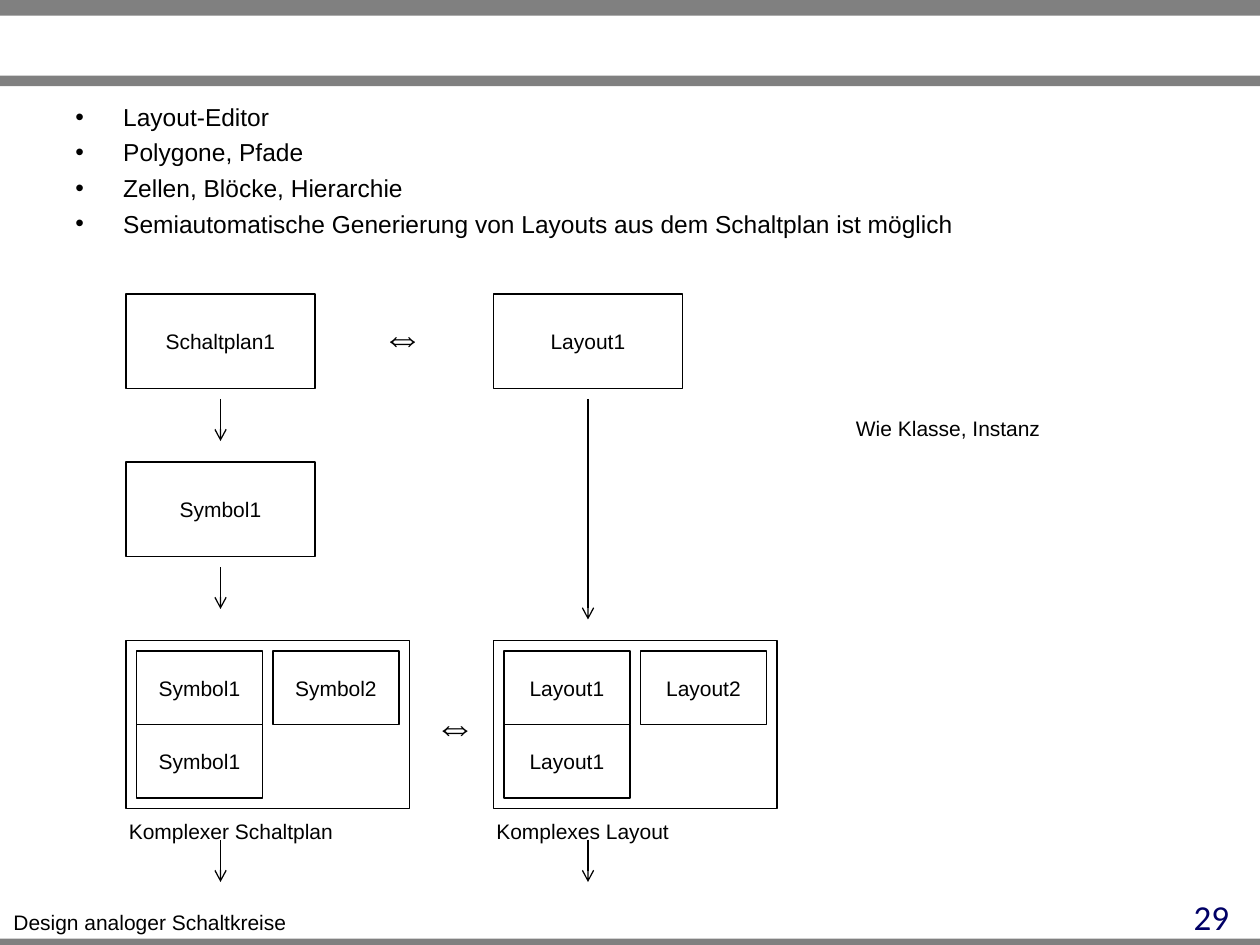
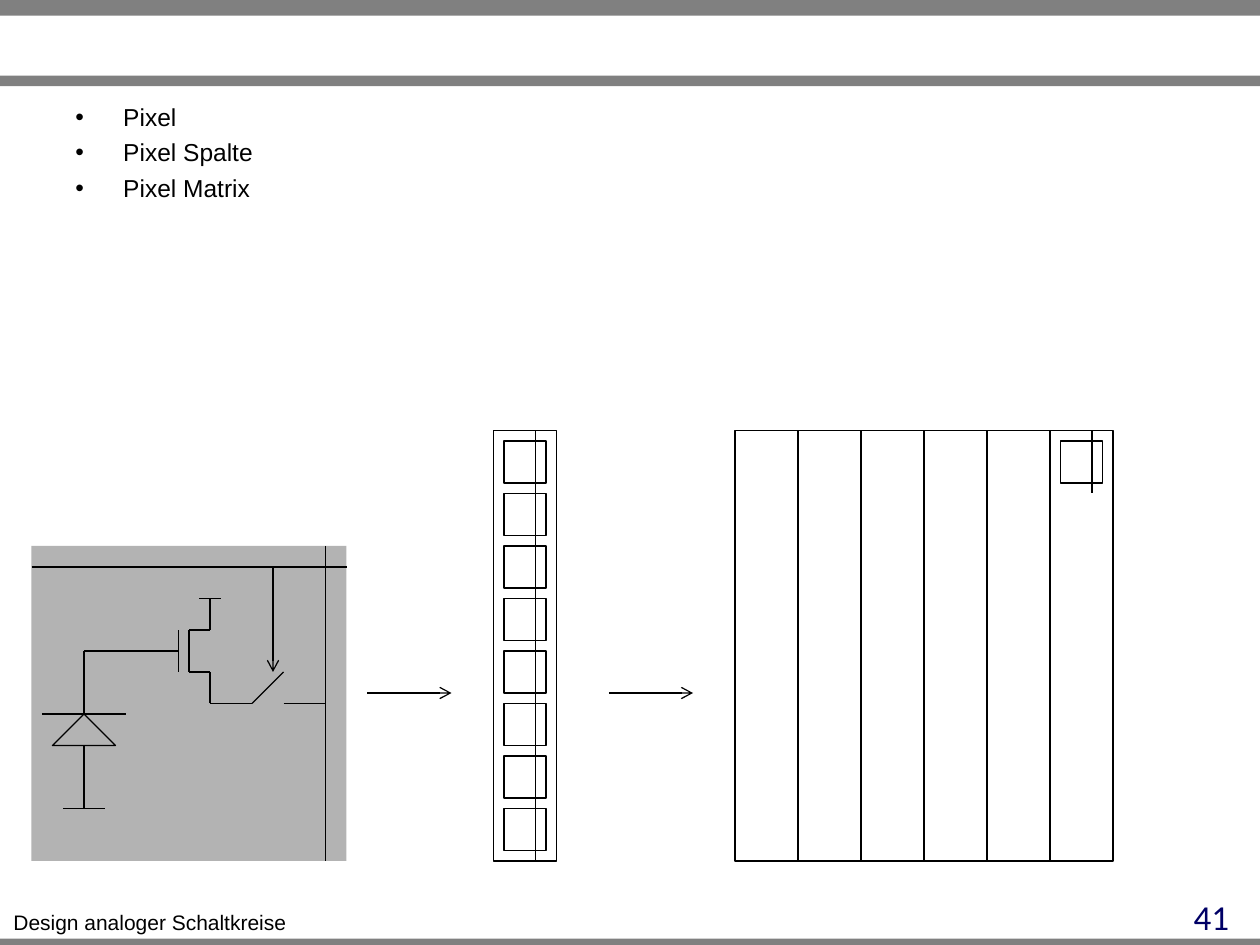
from typing import NamedTuple

from lxml.etree import SubElement
from pptx import Presentation
from pptx.dml.color import RGBColor
from pptx.enum.shapes import MSO_CONNECTOR, MSO_SHAPE
from pptx.enum.text import MSO_ANCHOR, PP_ALIGN
from pptx.oxml.ns import qn
from pptx.shapes.autoshape import Shape
from pptx.shapes.shapetree import GroupShapes, SlideShapes
from pptx.slide import Slide
from pptx.util import Inches, Pt

BLACK = RGBColor(0x00, 0x00, 0x00)
BAND_GREY = RGBColor(0x80, 0x80, 0x80)
PIXEL_GREY = RGBColor(0xB3, 0xB3, 0xB3)
NUMBER_BLUE = RGBColor(0x00, 0x00, 0x66)

COLUMNS, ROWS = 120, 90
CELL = Inches(10) / COLUMNS
LINE_WIDTH = Pt(0.75)
BULLET_INDENT = Inches(0.38)
BLOCK_SHIFT = 35
COLUMN_WIDTH, COLUMN_HEIGHT, MATRIX_TOP = 6, 41, 41
PIXEL_PITCH = 5

ShapeList = SlideShapes | GroupShapes


class Box(NamedTuple):
    column: float
    row: float
    width: float
    height: float

    def lengths(self) -> list[int]:
        return [grid(value) for value in self]


class Line(NamedTuple):
    start_column: float
    start_row: float
    end_column: float
    end_row: float
    arrow: bool = False


class Style(NamedTuple):
    size: float = 12
    font: str = "Arial"
    color: RGBColor = BLACK
    alignment: PP_ALIGN = PP_ALIGN.CENTER


class Caption(NamedTuple):
    text: str
    box: Box
    style: Style = Style()
    wrap: bool = False


class Block(NamedTuple):
    text: str
    box: Box


BANDS = [Box(0, 89.4, COLUMNS, 1), Box(0, 0, COLUMNS, 1.5), Box(0, 7.2, COLUMNS, 1)]
FOOTER = Caption("Design analoger Schaltkreise", Box(0, 86, 28.56, 3.6))
NUMBER_BOX = Box(90.24, 84.7, 28, 3.7)
NUMBER_STYLE = Style(20, "Calibri", NUMBER_BLUE, PP_ALIGN.RIGHT)
BULLET_STYLE = Style(14, alignment=PP_ALIGN.LEFT)
SYMBOL_STYLE = Style(24)

TRANSISTOR = [
    Line(15, 62, 17, 62), Line(17, 60, 17, 64), Line(18, 60, 18, 64),
    Line(18, 60, 20, 60), Line(18, 64, 20, 64), Line(20, 57, 20, 60),
    Line(20, 64, 20, 67), Line(19, 57, 21, 57),
]
DIODE = [
    Line(15, 62, 8, 62), Line(8, 62, 8, 68), Line(4, 68, 12, 68),
    Line(8, 71, 8, 77), Line(6, 77, 10, 77),
]
SWITCH = [
    Line(20, 67, 24, 67), Line(24, 67, 27, 64), Line(27, 67, 31, 67),
    Line(26, 54, 26, 64, True),
]
PIXEL_BUSES = [Line(31, 52, 31, 82), Line(3, 54, 33, 54)]


def grid(value: float) -> int:
    return round(value * CELL)


def add_box(shapes: ShapeList, box: Box, fill: RGBColor | None = None,
            kind: MSO_SHAPE = MSO_SHAPE.RECTANGLE) -> Shape:
    shape = shapes.add_shape(kind, *box.lengths())
    shape.shadow.inherit = False
    if fill is None:
        shape.fill.background()
        shape.line.color.rgb = BLACK
        shape.line.width = LINE_WIDTH
    else:
        shape.fill.solid()
        shape.fill.fore_color.rgb = fill
        shape.line.fill.background()
    return shape


def add_line(shapes: ShapeList, line: Line) -> None:
    ends = [grid(value) for value in line[:4]]
    connector = shapes.add_connector(MSO_CONNECTOR.STRAIGHT, *ends)
    connector.line.color.rgb = BLACK
    connector.line.width = LINE_WIDTH
    if line.arrow:
        SubElement(connector.line._get_or_add_ln(), qn("a:tailEnd"), type="arrow")
    SubElement(connector._element.spPr, qn("a:effectLst"))


def style_paragraph(paragraph, style: Style) -> None:
    paragraph.alignment = style.alignment
    paragraph.font.size = Pt(style.size)
    paragraph.font.name = style.font
    paragraph.font.color.rgb = style.color


def add_caption(slide: Slide, caption: Caption) -> None:
    frame = slide.shapes.add_textbox(*caption.box.lengths()).text_frame
    frame.word_wrap = caption.wrap
    frame.text = caption.text
    style_paragraph(frame.paragraphs[0], caption.style)


def add_block(slide: Slide, block: Block) -> None:
    frame = add_box(slide.shapes, block.box).text_frame
    frame.vertical_anchor = MSO_ANCHOR.MIDDLE
    frame.text = block.text
    style_paragraph(frame.paragraphs[0], Style())


def add_bullets(slide: Slide, items: list[str]) -> None:
    box = Box(6, 9.12, 108, 3 * len(items) + 10)
    frame = slide.shapes.add_textbox(*box.lengths()).text_frame
    frame.word_wrap = True
    frame.text = "\n".join(items)
    for index, paragraph in enumerate(frame.paragraphs):
        properties = paragraph._p.get_or_add_pPr()
        properties.set("marL", str(BULLET_INDENT))
        properties.set("indent", str(-BULLET_INDENT))
        SubElement(properties, qn("a:buFont"), typeface="Arial")
        SubElement(properties, qn("a:buChar"), char="•")
        style_paragraph(paragraph, BULLET_STYLE)
        if index:
            paragraph.space_before = Pt(3.5)


def add_page(presentation: Presentation, number: int, bullets: list[str]) -> Slide:
    slide = presentation.slides.add_slide(presentation.slide_layouts[6])
    for band in BANDS:
        add_box(slide.shapes, band, BAND_GREY)
    add_caption(slide, FOOTER)
    add_caption(slide, Caption(str(number), NUMBER_BOX, NUMBER_STYLE, True))
    add_bullets(slide, bullets)
    return slide


def add_hierarchy(slide: Slide, shift: float, cell_name: str, top_name: str,
                  caption: Caption) -> None:
    add_block(slide, Block(top_name, Box(12 + shift, 28, 18, 9)))
    add_box(slide.shapes, Box(12 + shift, 61, 27, 16))
    for suffix, column, row in [(1, 13, 62), (2, 26, 62), (1, 13, 69)]:
        add_block(slide, Block(f"{cell_name}{suffix}", Box(column + shift, row, 12, 7)))
    add_caption(slide, caption)
    add_line(slide.shapes, Line(21 + shift, 80, 21 + shift, 84, True))


def add_pixel(slide: Slide, column: float, row: float) -> None:
    shapes = slide.shapes.add_group_shape().shapes
    add_box(shapes, Box(column + 1, row + 1, 4, 4))
    add_line(shapes, Line(column + 4, row, column + 4, row + 6))


def add_pixel_circuit(slide: Slide) -> None:
    shapes = slide.shapes.add_group_shape().shapes
    add_box(shapes, Box(3, 52, 30, 30), PIXEL_GREY)
    add_box(shapes, Box(5, 68, 6, 3), kind=MSO_SHAPE.ISOSCELES_TRIANGLE)
    for line in TRANSISTOR + DIODE + SWITCH + PIXEL_BUSES:
        add_line(shapes, line)


def build_layout_slide(presentation: Presentation) -> None:
    slide = add_page(presentation, 29, [
        "Layout-Editor",
        "Polygone, Pfade",
        "Zellen, Blöcke, Hierarchie",
        "Semiautomatische Generierung von Layouts aus dem Schaltplan ist möglich",
    ])
    add_hierarchy(slide, 0, "Symbol", "Schaltplan1",
                  Caption("Komplexer Schaltplan", Box(11, 77.4, 22, 3.6)))
    add_hierarchy(slide, BLOCK_SHIFT, "Layout", "Layout1",
                  Caption("Komplexes Layout", Box(46, 77.4, 19, 3.6)))
    add_block(slide, Block("Symbol1", Box(12, 44, 18, 9)))
    for column, start, end in [(21, 38, 42), (21, 54, 58), (21 + BLOCK_SHIFT, 38, 59)]:
        add_line(slide.shapes, Line(column, start, column, end, True))
    for column, row in [(35, 29), (40, 66)]:
        add_caption(slide, Caption("⇔", Box(column, row, 6.7, 6), SYMBOL_STYLE))
    add_caption(slide, Caption("Wie Klasse, Instanz", Box(80.2, 39, 20.2, 3.6)))


def build_pixel_slide(presentation: Presentation) -> None:
    slide = add_page(presentation, 41, ["Pixel", "Pixel Spalte", "Pixel Matrix"])
    add_pixel_circuit(slide)
    matrix_columns = [70 + COLUMN_WIDTH * index for index in range(6)]
    for column in [47, *matrix_columns]:
        add_box(slide.shapes, Box(column, MATRIX_TOP, COLUMN_WIDTH, COLUMN_HEIGHT))
    for index in range(8):
        add_pixel(slide, 47, MATRIX_TOP + PIXEL_PITCH * index)
    add_pixel(slide, matrix_columns[-1], MATRIX_TOP)
    for start in (35, 58):
        add_line(slide.shapes, Line(start, 66, start + 8, 66, True))


def main() -> None:
    presentation = Presentation()
    presentation.slide_width = grid(COLUMNS)
    presentation.slide_height = grid(ROWS)
    build_layout_slide(presentation)
    build_pixel_slide(presentation)
    presentation.save("out.pptx")


if __name__ == "__main__":
    main()
